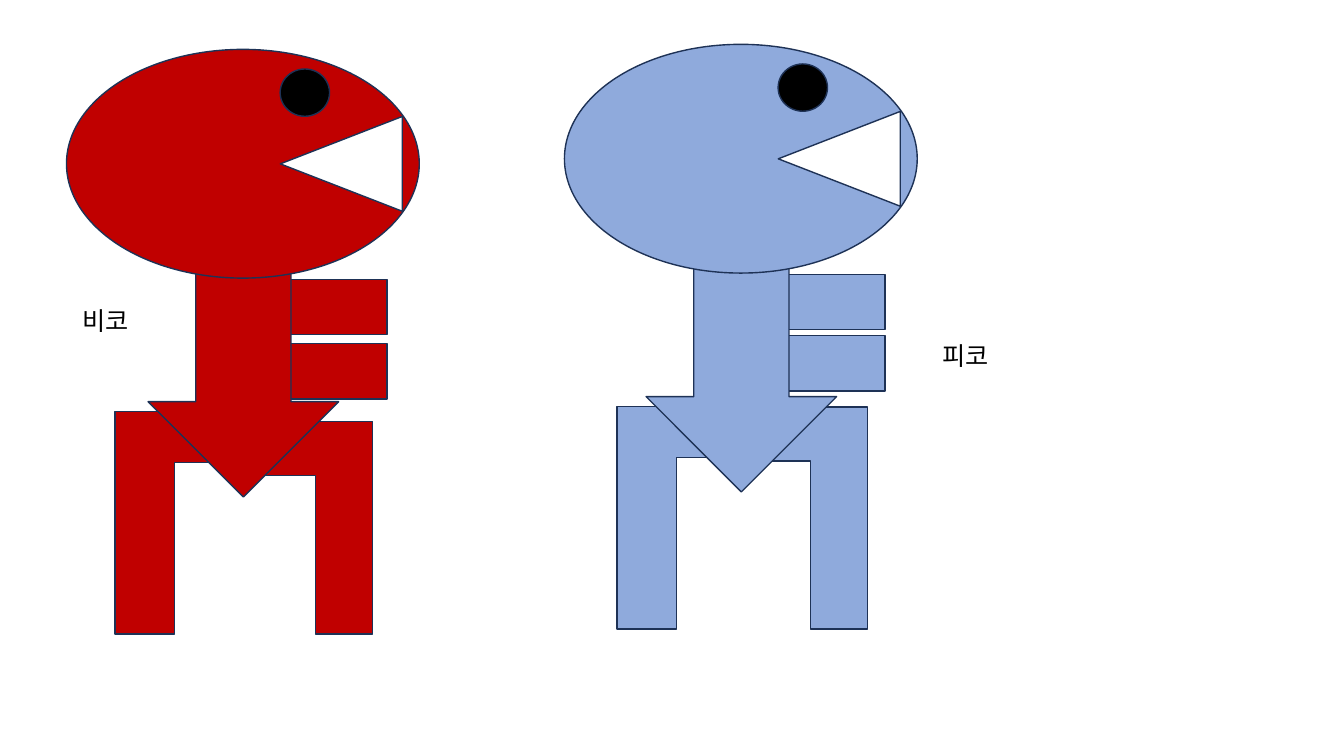
from pptx import Presentation
from pptx import util as u
from pptx.dml import color
from pptx.enum import shapes, text
from pptx.oxml import ns
from lxml import etree

COLORS = {"red": "C00000", "blue": "8FAADC", "white": "FFFFFF",
          "black": "000000", "outline": "1E3256"}
FONT = "Noto Sans CJK KR"
KIND = shapes.MSO_SHAPE
LEG_BOTTOM = 417.6

CHARACTERS = [
    {"origin": (47.5, 35.3), "body": "red", "lower_arm": 210.2,
     "left_leg": (34.6, 258.5), "right_leg": (141.8, 265.7)},
    {"origin": (403.2, 31.7), "body": "blue", "lower_arm": 208.1,
     "left_leg": (37.4, 258.5), "right_leg": (139.7, 259.2)},
]
LABELS = [
    ("비코", (51.8, 214.6, 56.2, 28.8)),
    ("피코", (666, 239.8, 54, 28.8)),
]


def character_parts(character):
    body = character["body"]
    left_x, left_y = character["left_leg"]
    right_x, right_y = character["right_leg"]
    return [
        (KIND.RECTANGLE, (92.9, 164.2, 136.1, 39.6), body, {}),
        (KIND.RECTANGLE, (92.9, character["lower_arm"], 136.1, 39.6), body, {}),
        (KIND.CORNER, (left_x, left_y, 73.4, LEG_BOTTOM - left_y), body,
         {"adjust": (0.5, 0.58), "flips": ("flipV",)}),
        (KIND.CORNER, (right_x, right_y, 77, LEG_BOTTOM - right_y), body,
         {"adjust": (0.5, 0.53), "flips": ("flipH", "flipV")}),
        (KIND.DOWN_ARROW, (58.3, 136.8, 136.1, 182.9), body, {}),
        (KIND.OVAL, (0, 0, 252, 163.4), body, {}),
        (KIND.ISOSCELES_TRIANGLE, (162.4, 38.2, 67.7, 87.1), "white",
         {"rotation": 270}),
        (KIND.OVAL, (152.6, 14, 35.3, 33.8), "black", {}),
    ]


def rgb(name):
    return color.RGBColor.from_string(COLORS[name])


def set_values(target, values):
    for name, value in values.items():
        setattr(target, name, value)


def add_part(group, origin, kind, box, fill, options):
    left, top, width, height = box
    position = (origin[0] + left, origin[1] + top, width, height)
    shape = group.shapes.add_shape(kind, *map(u.Pt, position))
    shape.shadow.inherit = False
    shape.fill.solid()
    shape.fill.fore_color.rgb = rgb(fill)
    shape.line.color.rgb = rgb("outline")
    shape.line.width = u.Pt(1)
    shape.rotation = options.get("rotation", 0)
    for index, value in enumerate(options.get("adjust", ())):
        shape.adjustments[index] = value
    for flip in options.get("flips", ()):
        shape.element.spPr.find(ns.qn("a:xfrm")).set(flip, "1")


def add_label(slide, wording, box):
    shape = slide.shapes.add_textbox(*map(u.Pt, box))
    set_values(shape.text_frame, {
        "word_wrap": True, "auto_size": text.MSO_AUTO_SIZE.SHAPE_TO_FIT_TEXT})
    run = shape.text_frame.paragraphs[0].add_run()
    run.text = wording
    set_values(run.font, {"name": FONT, "size": u.Pt(18)})
    run.font.color.rgb = rgb("black")
    properties = run.font.element if hasattr(run.font, "element") else run._r.get_or_add_rPr()
    etree.SubElement(properties, ns.qn("a:ea")).set("typeface", FONT)


def main():
    presentation = Presentation()
    set_values(presentation, {"slide_width": u.Pt(960), "slide_height": u.Pt(540)})
    slide = presentation.slides.add_slide(presentation.slide_layouts[6])
    for character in CHARACTERS:
        group = slide.shapes.add_group_shape()
        for part in character_parts(character):
            add_part(group, character["origin"], *part)
    for wording, box in LABELS:
        add_label(slide, wording, box)
    presentation.save("out.pptx")


if __name__ == "__main__":
    main()
